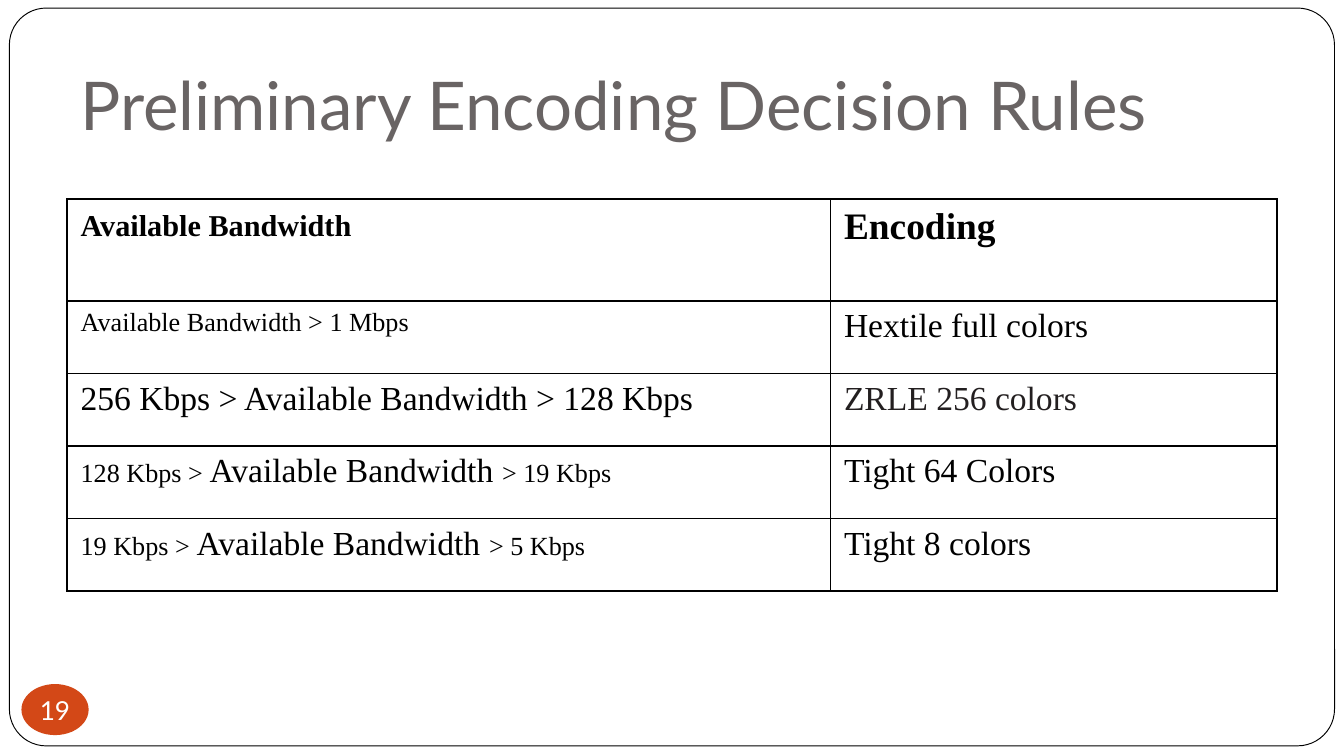
from dataclasses import dataclass

from lxml.etree import SubElement
from pptx import Presentation
from pptx.dml.color import RGBColor
from pptx.enum.shapes import MSO_SHAPE
from pptx.enum.text import MSO_ANCHOR, PP_ALIGN
from pptx.oxml.ns import qn
from pptx.util import Inches, Pt


@dataclass(frozen=True)
class Theme:
    heading_font: str = "Lato"
    table_font: str = "Times New Roman"
    paper: str = "FFFFFF"
    ink: str = "000000"
    soft_ink: str = "231F20"
    heading: str = "696464"
    accent: str = "D34817"
    title_size: int = 36
    raised_size: int = 28
    header_size: int = 20
    body_size: int = 18
    small_size: int = 14
    frame_width: float = 0.5
    border_width: float = 1


def write(paragraph, text, *, font, size, color, bold=False, raised=0):
    run = paragraph.add_run()
    run.text = text
    run.font.name = font
    run.font.size = Pt(size)
    run.font.bold = bold
    run.font.color.rgb = RGBColor.from_string(color)
    if raised:
        run._r.get_or_add_rPr().set("baseline", str(raised * 1000))


class SlideBuilder:
    """Draws styled elements on the current slide."""

    def __init__(self, slide, theme):
        self.slide = slide
        self.theme = theme

    def shape(self, kind, box, fill, line=None):
        shape = self.slide.shapes.add_shape(kind, *map(Inches, box))
        shape.shadow.inherit = False
        shape.fill.solid()
        shape.fill.fore_color.rgb = RGBColor.from_string(fill)
        if line:
            shape.line.color.rgb = RGBColor.from_string(line)
            shape.line.width = Pt(self.theme.frame_width)
        else:
            shape.line.fill.background()
        return shape

    def set_margins(self, frame, inset):
        frame.margin_left = frame.margin_right = Inches(inset)
        frame.margin_top = frame.margin_bottom = Inches(inset)

    def frame(self, box, corner):
        border = self.shape(MSO_SHAPE.ROUNDED_RECTANGLE, box, self.theme.paper, self.theme.ink)
        border.adjustments[0] = corner

    def title(self, text, box):
        frame = self.slide.shapes.add_textbox(*map(Inches, box)).text_frame
        frame.word_wrap = True
        frame.vertical_anchor = MSO_ANCHOR.BOTTOM
        self.set_margins(frame, 0.1)
        write(frame.paragraphs[0], text, font=self.theme.heading_font,
              size=self.theme.title_size, color=self.theme.heading)

    def page_badge(self, number, box):
        frame = self.shape(MSO_SHAPE.OVAL, box, self.theme.accent).text_frame
        frame.word_wrap = False
        frame.vertical_anchor = MSO_ANCHOR.MIDDLE
        self.set_margins(frame, 0)
        frame.paragraphs[0].alignment = PP_ALIGN.CENTER
        write(frame.paragraphs[0], number, font=self.theme.heading_font,
              size=self.theme.small_size, color=self.theme.paper)

    def outline_cell(self, cell):
        properties = cell._tc.get_or_add_tcPr()
        for side in ("a:lnL", "a:lnR", "a:lnT", "a:lnB"):
            line = SubElement(properties, qn(side), w=str(Pt(self.theme.border_width)))
            SubElement(SubElement(line, qn("a:solidFill")), qn("a:srgbClr"), val=self.theme.ink)
        cell.fill.background()

    def table(self, rows, box, widths, heights):
        table = self.slide.shapes.add_table(len(rows), len(widths), *map(Inches, box)).table
        table.first_row = table.horz_banding = False
        for column, width in zip(table.columns, widths):
            column.width = Inches(width)
        for row, height, contents in zip(table.rows, heights, rows):
            row.height = Inches(height)
            for cell, runs in zip(row.cells, contents):
                self.outline_cell(cell)
                for text, style in runs:
                    write(cell.text_frame.paragraphs[0], text, **style)


def main():
    theme = Theme()
    presentation = Presentation()
    presentation.slide_width = Inches(10)
    presentation.slide_height = Inches(10 * 9 / 16)
    builder = SlideBuilder(presentation.slides.add_slide(presentation.slide_layouts[6]), theme)

    body = dict(font=theme.table_font, size=theme.body_size, color=theme.ink)
    small = body | dict(size=theme.small_size)
    soft = body | dict(color=theme.soft_ink)
    header = body | dict(size=theme.header_size, bold=True)
    raised_header = header | dict(size=theme.raised_size, raised=30)

    def bandwidth_range(upper, lower):
        return [(f"{upper} Kbps > ", small), ("Available Bandwidth ", body),
                (f"> {lower} Kbps", small)]

    rules = [
        ([("Available Bandwidth", raised_header)], [("Encoding", header)]),
        ([("Available Bandwidth > 1 Mbps", small)], [("Hextile full colors", body)]),
        ([("256 Kbps > Available Bandwidth > 128 Kbps", body)], [("ZRLE 256 colors", soft)]),
        (bandwidth_range(128, 19), [("Tight 64 Colors", body)]),
        (bandwidth_range(19, 5), [("Tight 8 colors", body)]),
    ]

    builder.frame((0.07, 0.06, 9.86, 5.49), 0.05)
    builder.title("Preliminary Encoding Decision Rules", (0.5, 0.23, 9, 0.94))
    builder.page_badge("19", (0.16, 5.09, 0.5, 0.38))
    builder.table(rules, (0.5, 1.48, 9, 2.92), (5.68, 3.32), [0.76] + [0.54] * 4)
    presentation.save("out.pptx")


if __name__ == "__main__":
    main()
